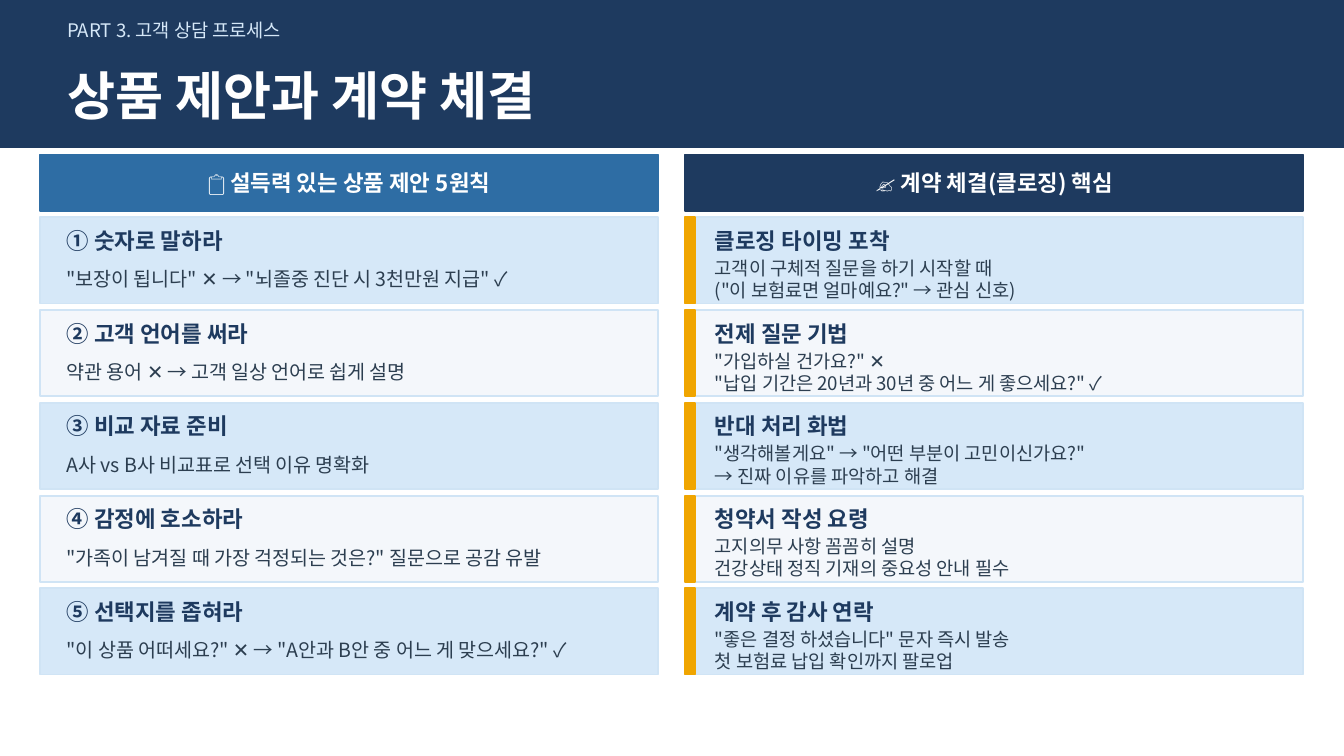
from pptx import Presentation
from pptx.dml.color import RGBColor
from pptx.enum.shapes import MSO_SHAPE
from pptx.enum.text import MSO_ANCHOR, MSO_AUTO_SIZE, PP_ALIGN
from pptx.oxml.ns import qn
from pptx.util import Cm, Pt
from lxml import etree

RECT = MSO_SHAPE.RECTANGLE
MIDDLE = MSO_ANCHOR.MIDDLE
NO_AUTOFIT = MSO_AUTO_SIZE.NONE
LEFT, CENTER = PP_ALIGN.LEFT, PP_ALIGN.CENTER

FONT = "Noto Sans CJK KR"
NAVY = RGBColor(0x1E, 0x3A, 0x5F)
BLUE = RGBColor(0x2E, 0x6D, 0xA4)
SKY = RGBColor(0xD6, 0xE8, 0xF8)
PALE = RGBColor(0xF4, 0xF7, 0xFB)
BORDER = RGBColor(0xD0, 0xE4, 0xF5)
AMBER = RGBColor(0xF0, 0xA5, 0x00)
INK = RGBColor(0x2C, 0x3E, 0x50)
WHITE = RGBColor(0xFF, 0xFF, 0xFF)

# Content
PART = "PART 3. 고객 상담 프로세스"
TITLE = "상품 제안과 계약 체결"
PRINCIPLES = [
    ("① 숫자로 말하라", ['"보장이 됩니다" ✕ → "뇌졸중 진단 시 3천만원 지급" ✓']),
    ("② 고객 언어를 써라", ["약관 용어 ✕ → 고객 일상 언어로 쉽게 설명"]),
    ("③ 비교 자료 준비", ["A사 vs B사 비교표로 선택 이유 명확화"]),
    ("④ 감정에 호소하라", ['"가족이 남겨질 때 가장 걱정되는 것은?" 질문으로 공감 유발']),
    ("⑤ 선택지를 좁혀라", ['"이 상품 어떠세요?" ✕ → "A안과 B안 중 어느 게 맞으세요?" ✓']),
]
CLOSING = [
    ("클로징 타이밍 포착",
     ["고객이 구체적 질문을 하기 시작할 때", '("이 보험료면 얼마예요?" → 관심 신호)']),
    ("전제 질문 기법",
     ['"가입하실 건가요?" ✕', '"납입 기간은 20년과 30년 중 어느 게 좋으세요?" ✓']),
    ("반대 처리 화법",
     ['"생각해볼게요" → "어떤 부분이 고민이신가요?"', "→ 진짜 이유를 파악하고 해결"]),
    ("청약서 작성 요령",
     ["고지의무 사항 꼼꼼히 설명", "건강상태 정직 기재의 중요성 안내 필수"]),
    ("계약 후 감사 연락",
     ['"좋은 결정 하셨습니다" 문자 즉시 발송', "첫 보험료 납입 확인까지 팔로업"]),
]
COLUMNS = [
    dict(heading="📋 설득력 있는 상품 제안 5원칙", cards=PRINCIPLES, left=0.76,
         color=BLUE, text_indent=0.25, detail_size=10.5, accent=False),
    dict(heading="✍️ 계약 체결(클로징) 핵심", cards=CLOSING, left=12.95,
         color=NAVY, text_indent=0.31, detail_size=10, accent=True),
]

# Layout in centimetres
SLIDE_W, SLIDE_H = 25.4, 14.29
COLUMN_W, TEXT_W = 11.68, 11.18
HEADING_TOP, HEADING_H = 2.92, 1.07
CARD_TOP, CARD_H, CARD_PITCH = 4.11, 1.63, 1.753
ACCENT_W = 0.18


def add_rect(left, top, width, height, fill, line):
    rect = slide.shapes.add_shape(RECT, Cm(left), Cm(top), Cm(width), Cm(height))
    rect.shadow.inherit = False
    rect.fill.solid()
    rect.fill.fore_color.rgb = fill
    rect.line.color.rgb = line
    rect.line.width = Pt(1)


def add_text(lines, left, top, width, height, size, color,
             bold=False, align=LEFT, holder=None):
    holder = holder or slide.shapes.add_textbox(0, 0, 0, 0)
    holder.left, holder.top = Cm(left), Cm(top)
    holder.width, holder.height = Cm(width), Cm(height)
    frame = holder.text_frame
    frame.text = "\n".join(lines)
    frame.word_wrap = True
    frame.auto_size = NO_AUTOFIT
    frame.vertical_anchor = MIDDLE
    for paragraph in frame.paragraphs:
        paragraph.alignment = align
        for run in paragraph.runs:
            font = run.font
            font.name, font.size, font.bold = FONT, Pt(size), bold
            font.color.rgb = color
            etree.SubElement(run._r.rPr, qn("a:ea"), typeface=FONT)


prs = Presentation()
prs.slide_width, prs.slide_height = Cm(SLIDE_W), Cm(SLIDE_H)
slide = prs.slides.add_slide(prs.slide_layouts.get_by_name("Title Only"))

# Header band, with the title raised above it
add_rect(0, 0, SLIDE_W, 2.79, NAVY, NAVY)
add_text([PART], 1.02, 0.13, 22.86, 0.89, size=10, color=SKY)
title = slide.shapes.title
slide.shapes.element.append(title.element)
add_text([TITLE], 1.02, 0.97, 22.86, 1.65, size=28, color=WHITE, bold=True, holder=title)

# Two columns of cards
for column in COLUMNS:
    left = column["left"]
    text_left = left + column["text_indent"]
    add_rect(left, HEADING_TOP, COLUMN_W, HEADING_H, column["color"], column["color"])
    add_text([column["heading"]], left, HEADING_TOP, COLUMN_W, HEADING_H,
             size=12, color=WHITE, bold=True, align=CENTER)
    for row, (name, details) in enumerate(column["cards"]):
        top = CARD_TOP + row * CARD_PITCH
        add_rect(left, top, COLUMN_W, CARD_H, PALE if row % 2 else SKY, BORDER)
        if column["accent"]:
            add_rect(left, top, ACCENT_W, CARD_H, AMBER, AMBER)
        add_text([name], text_left, top + 0.08, TEXT_W, 0.71,
                 size=12, color=NAVY, bold=True)
        add_text(details, text_left, top + 0.76, TEXT_W, 0.81,
                 size=column["detail_size"], color=INK)

prs.save("out.pptx")
